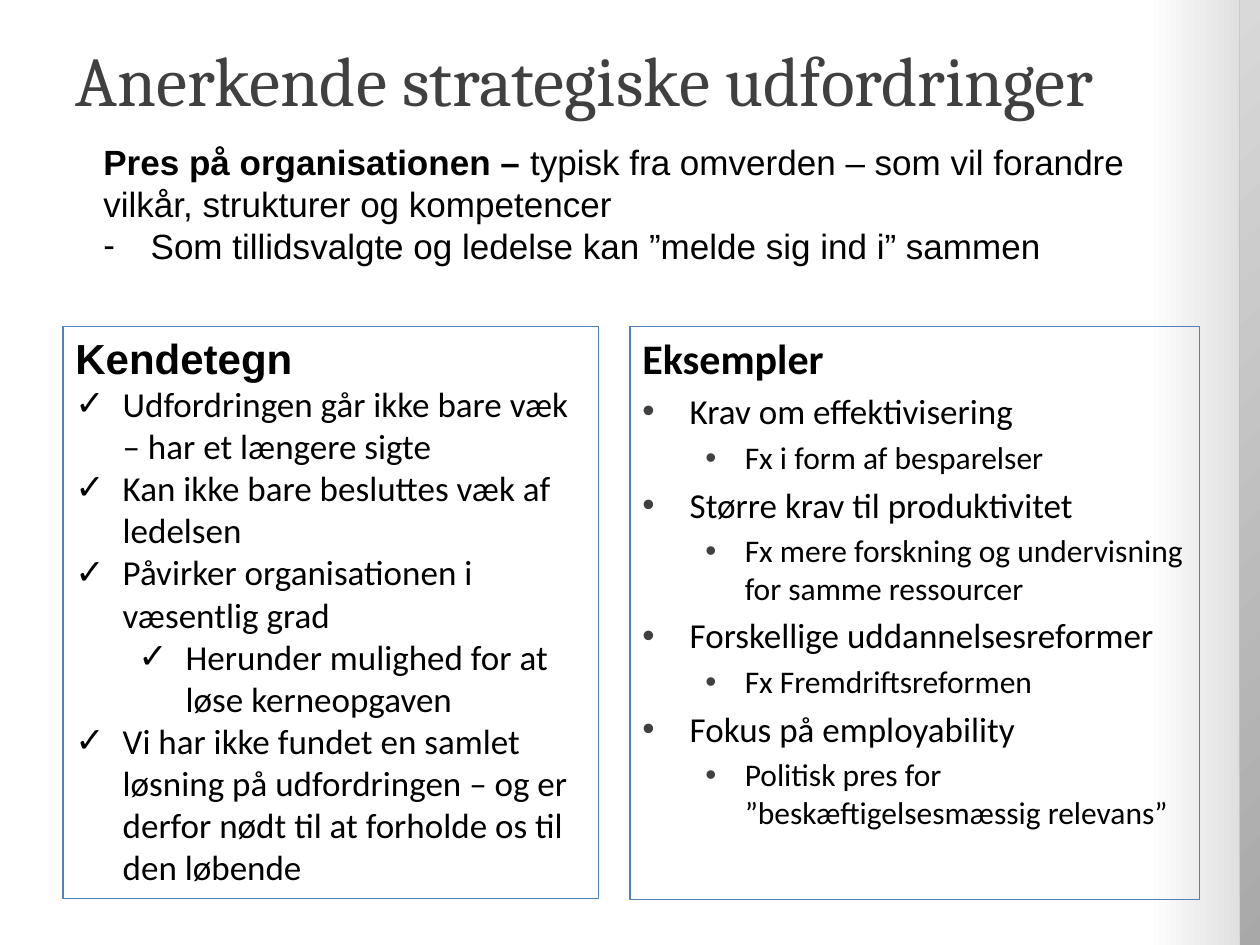
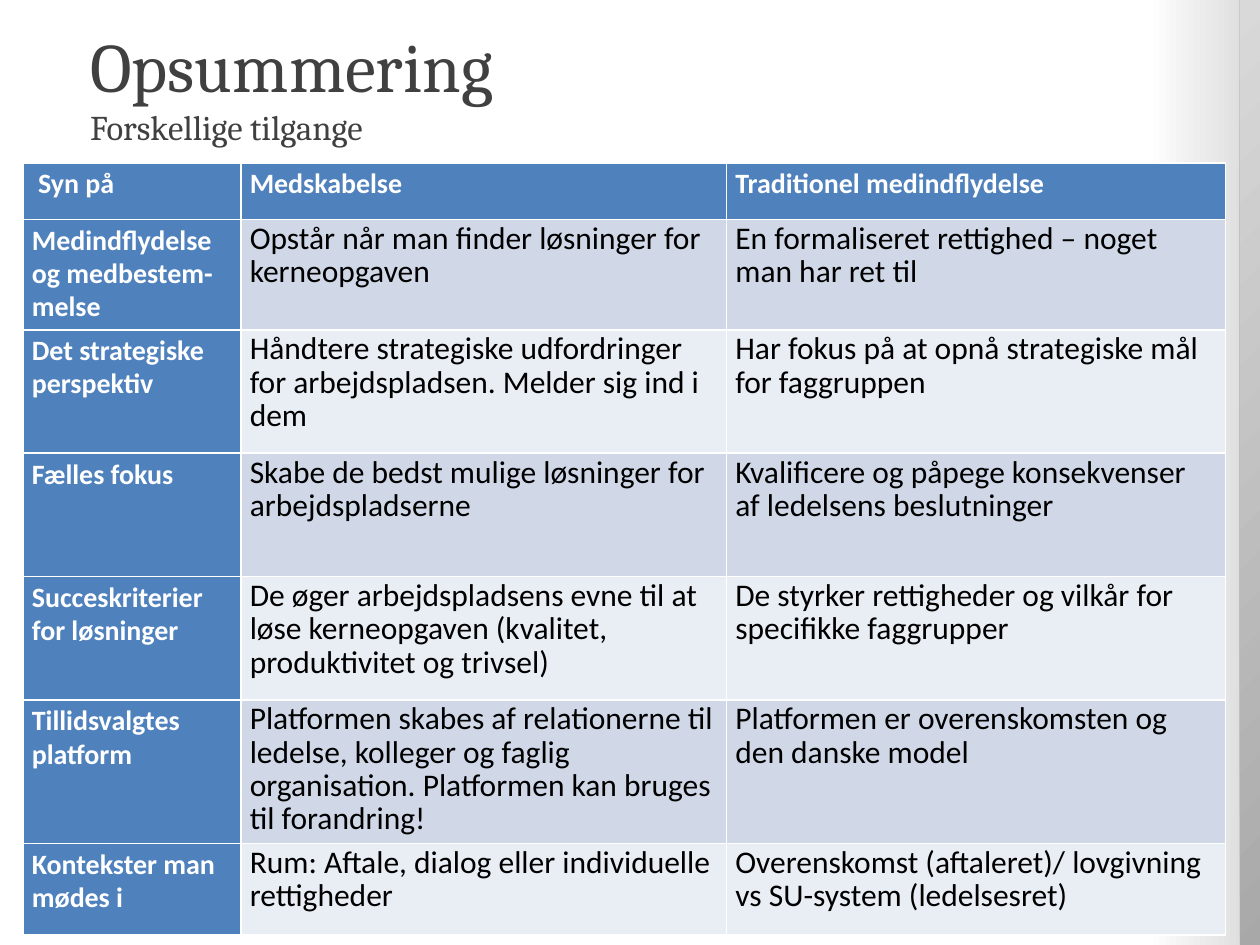
from dataclasses import dataclass
from lxml import etree
from pptx import Presentation, util as u
from pptx.dml.color import RGBColor
from pptx.enum import shapes, text
from pptx.oxml import ns


@dataclass(frozen=True)
class Theme:
    ink: str = "000000"
    grey: str = "404040"
    paper: str = "FFFFFF"
    blue: str = "4F81BD"
    bands: tuple = ("D0D8E8", "E9EDF4")
    edge_light: str = "D9D9D9"
    edge_dark: str = "A6A6A6"
    serif: str = "Cambria"
    sans: str = "Calibri"
    plain: str = "Arial"
    title: float = 40
    heading: float = 24
    body: float = 20
    detail: float = 18
    label: float = 16


T = Theme()
PAGE = (720, 540)
STRIP = (708.5, 0, 31, 551)

CHALLENGES = {
    "title": "Anerkende strategiske udfordringer",
    "pressure": ("Pres på organisationen – ",
                 "typisk fra omverden – som vil forandre vilkår, strukturer og kompetencer"),
    "response": "Som tillidsvalgte og ledelse kan ”melde sig ind i” sammen",
    "signs": ("Kendetegn", [
        (0, "Udfordringen går ikke bare væk – har et længere sigte"),
        (0, "Kan ikke bare besluttes væk af ledelsen"),
        (0, "Påvirker organisationen i væsentlig grad"),
        (1, "Herunder mulighed for at løse kerneopgaven"),
        (0, "Vi har ikke fundet en samlet løsning på udfordringen – og er derfor "
            "nødt til at forholde os til den løbende"),
    ]),
    "examples": ("Eksempler", [
        (0, "Krav om effektivisering"),
        (1, "Fx i form af besparelser"),
        (0, "Større krav til produktivitet"),
        (1, "Fx mere forskning og undervisning for samme ressourcer"),
        (0, "Forskellige uddannelsesreformer"),
        (1, "Fx Fremdriftsreformen"),
        (0, "Fokus på employability"),
        (1, "Politisk pres for ”beskæftigelsesmæssig relevans”"),
    ]),
}

SUMMARY = {
    "title": "Opsummering",
    "subtitle": "Forskellige tilgange",
    "columns": (124.5, 277.5, 285),
    "heights": (32.5, 57.5, 70.5, 70.5, 70.5, 57.5, 52.5),
    "views": [
        (" Syn på", "Medskabelse", "Traditionel medindflydelse"),
        ("Medindflydelse og medbestem-melse",
         "Opstår når man finder løsninger for kerneopgaven",
         "En formaliseret rettighed – noget man har ret til"),
        ("Det strategiske perspektiv",
         "Håndtere strategiske udfordringer for arbejdspladsen. Melder sig ind i dem",
         "Har fokus på at opnå strategiske mål for faggruppen"),
        ("Fælles fokus",
         "Skabe de bedst mulige løsninger for arbejdspladserne",
         "Kvalificere og påpege konsekvenser af ledelsens beslutninger"),
        ("Succeskriterier for løsninger",
         "De øger arbejdspladsens evne til at løse kerneopgaven "
         "(kvalitet, produktivitet og trivsel)",
         "De styrker rettigheder og vilkår for specifikke faggrupper"),
        ("Tillidsvalgtes platform",
         "Platformen skabes af relationerne til ledelse, kolleger og faglig "
         "organisation. Platformen kan bruges til forandring!",
         "Platformen er overenskomsten og den danske model"),
        ("Kontekster man mødes i",
         "Rum: Aftale, dialog eller individuelle rettigheder",
         "Overenskomst (aftaleret)/ lovgivning vs SU-system (ledelsesret)"),
    ],
}


def rgb(code):
    return RGBColor.from_string(code)


def points(values):
    return [u.Pt(value) for value in values]


def apply(target, **values):
    for name, value in values.items():
        setattr(target, name, value)


def write(paragraph, words, size, name=T.sans, ink=T.ink, bold=False):
    run = paragraph.add_run()
    run.text = words
    apply(run.font, size=u.Pt(size), name=name, bold=bold)
    run.font.color.rgb = rgb(ink)


def bullet(paragraph, mark, margin, hang, ink=T.ink):
    props = paragraph._p.get_or_add_pPr()
    props.set("marL", str(u.Pt(margin)))
    props.set("indent", str(-u.Pt(hang)))
    tint = etree.SubElement(props, ns.qn("a:buClr"))
    etree.SubElement(tint, ns.qn("a:srgbClr"), val=ink)
    etree.SubElement(props, ns.qn("a:buFont"), typeface=T.plain)
    etree.SubElement(props, ns.qn("a:buChar"), char=mark)


def gradient(fill, stops):
    fill.gradient()
    for stop, (position, code) in zip(fill.gradient_stops, stops):
        stop.position = position
        stop.color.rgb = rgb(code)
    return fill._xPr.find(ns.qn("a:gradFill"))


def new_slide(deck):
    slide = deck.slides.add_slide(deck.slide_layouts[6])
    backdrop = gradient(slide.background.fill, [(0.91, T.paper), (1, T.edge_light)])
    slide.background.fill.gradient_angle = 0
    etree.SubElement(backdrop.findall(".//" + ns.qn("a:srgbClr"))[1],
                     ns.qn("a:alpha"), val="50000")

    strip = slide.shapes.add_shape(shapes.MSO_SHAPE.RECTANGLE, *points(STRIP))
    strip.shadow.inherit = False
    strip.line.fill.background()
    shade = gradient(strip.fill, [(0, T.edge_light), (1, T.edge_dark)])
    shade.remove(shade.find(ns.qn("a:lin")))
    radial = etree.SubElement(shade, ns.qn("a:path"), {"path": "circle"})
    etree.SubElement(radial, ns.qn("a:fillToRect"), r="100000", b="100000")
    return slide


def text_area(slide, box, anchor=text.MSO_ANCHOR.TOP):
    area = slide.shapes.add_textbox(*points(box))
    apply(area.text_frame, word_wrap=True, vertical_anchor=anchor)
    return area.text_frame


def add_title(slide, box, lines):
    paragraph = text_area(slide, box, text.MSO_ANCHOR.MIDDLE).paragraphs[0]
    for number, (words, size) in enumerate(lines):
        if number:
            paragraph.add_line_break()
        write(paragraph, words, size, T.serif, T.grey)


def add_panel(slide, box, content, heading_font, mark, mark_ink, sizes, margins, gap):
    panel = slide.shapes.add_shape(shapes.MSO_SHAPE.RECTANGLE, *points(box))
    panel.shadow.inherit = False
    panel.fill.background()
    panel.line.color.rgb = rgb(T.blue)
    panel.line.width = u.Pt(0.75)
    frame = panel.text_frame
    apply(frame, word_wrap=True, vertical_anchor=text.MSO_ANCHOR.TOP)
    heading, items = content
    first = frame.paragraphs[0]
    first.alignment = text.PP_ALIGN.LEFT
    write(first, heading, T.heading, heading_font, bold=True)
    for level, words in items:
        paragraph = frame.add_paragraph()
        margin, hang = margins[level]
        bullet(paragraph, mark, margin, hang, mark_ink)
        apply(paragraph, level=level, alignment=text.PP_ALIGN.LEFT,
              space_before=u.Pt(gap * sizes[level]))
        write(paragraph, words, sizes[level])


def build_challenges(deck):
    slide = new_slide(deck)
    add_title(slide, (36, 0, 648, 90), [(CHALLENGES["title"], T.title)])
    add_panel(slide, (360, 186.5, 325.5, 327.5), CHALLENGES["examples"], T.sans,
              "•", T.grey, (T.body, T.detail), ((27, 27), (58.5, 22.5)), 0.2)
    intro = text_area(slide, (52, 77, 616, 80))
    for part, words in enumerate(CHALLENGES["pressure"]):
        write(intro.paragraphs[0], words, T.body, T.plain, bold=part == 0)
    response = intro.add_paragraph()
    bullet(response, "-", 27, 27)
    write(response, CHALLENGES["response"], T.body, T.plain)
    add_panel(slide, (36, 186.5, 306, 327), CHALLENGES["signs"], T.plain,
              "✓", T.ink, (T.body, T.body), ((27, 27), (63, 27)), 0)


def build_summary(deck):
    slide = new_slide(deck)
    add_title(slide, (44.5, 15, 633.5, 67.5),
              [(SUMMARY["title"], T.title * 0.99), (SUMMARY["subtitle"], T.body * 0.99)])
    views, columns, heights = (SUMMARY[key] for key in ("views", "columns", "heights"))
    frame = slide.shapes.add_table(len(views), len(columns),
                                   *points((13.25, 93, sum(columns), sum(heights))))
    table = frame.table
    table.first_col = True
    for column, width in zip(table.columns, columns):
        column.width = u.Pt(width)
    for row, height in zip(table.rows, heights):
        row.height = u.Pt(height)
    for r, view in enumerate(views):
        for c, words in enumerate(view):
            cell = table.cell(r, c)
            label = r == 0 or c == 0
            apply(cell, margin_left=u.Pt(5), margin_right=u.Pt(5),
                  margin_top=u.Pt(3), margin_bottom=u.Pt(3))
            cell.fill.solid()
            cell.fill.fore_color.rgb = rgb(T.blue if label else T.bands[(r - 1) % 2])
            paragraph = cell.text_frame.paragraphs[0]
            paragraph.line_spacing = u.Pt(19)
            write(paragraph, words, T.label if label else T.detail,
                  ink=T.paper if label else T.ink, bold=label)


def main():
    deck = Presentation()
    deck.slide_width, deck.slide_height = points(PAGE)
    build_challenges(deck)
    build_summary(deck)
    deck.save("out.pptx")


if __name__ == "__main__":
    main()
